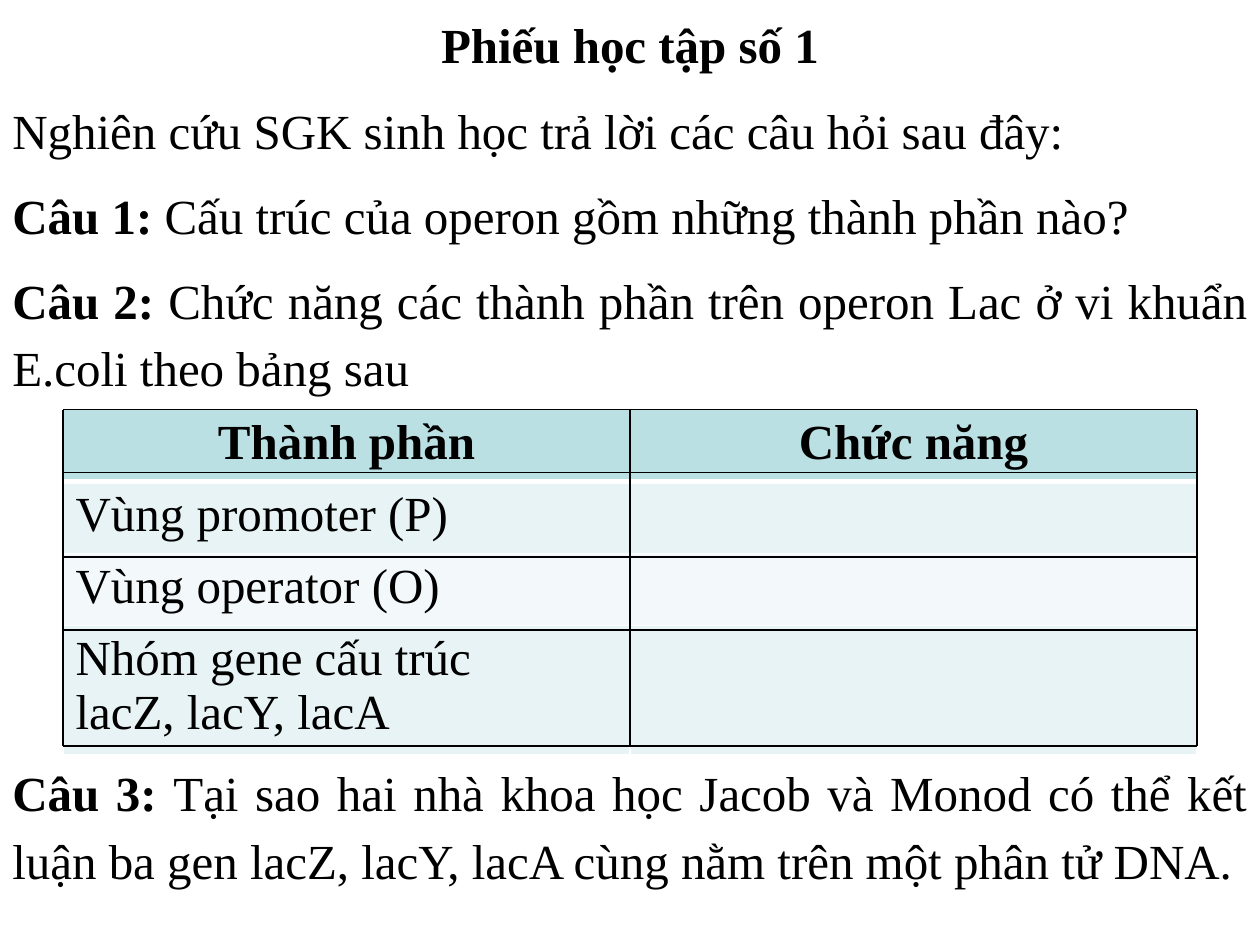
import pptx
import pptx.dml.color
import pptx.enum.shapes
import pptx.enum.text
import pptx.oxml.ns
import pptx.util
from lxml import etree

Cm, Pt = pptx.util.Cm, pptx.util.Pt
ALIGN = pptx.enum.text.PP_ALIGN
FONT = "Times New Roman"
COLORS = {
    "ink": "000000",
    "border": "FFFFFF",
    "header": "BBE0E3",
    "odd": "E7F3F4",
    "even": "F3F9FA",
}
LEFT, TOP, COLUMN_WIDTH = 1.27, 8.26, 11.43
ROW_HEIGHTS = [1.45, 1.45, 1.45, 2.61]
RULE_YS = [TOP, 9.53, 11.23, 12.7, 15.04]

QUESTIONS = [
    ("Câu 1: ", "Cấu trúc của operon gồm những thành phần nào?"),
    ("Câu 2: ", "Chức năng các thành phần trên operon Lac ở vi khuẩn E.coli theo bảng sau"),
    ("Câu 3: ", "Tại sao hai nhà khoa học Jacob và Monod có thể kết luận ba gen "
                "lacZ, lacY, lacA cùng nằm trên một phân tử DNA."),
]
COMPONENTS = [
    ("Thành phần", "Chức năng"),
    ("Vùng promoter (P)", ""),
    ("Vùng operator (O)", ""),
    ("Nhóm gene cấu trúc\nlacZ, lacY, lacA", ""),
]


def rgb(name):
    return pptx.dml.color.RGBColor.from_string(COLORS[name])


def style(paragraph, align, bold=None):
    paragraph.alignment = align
    paragraph.font.name = FONT
    paragraph.font.size = Pt(28)
    paragraph.font.bold = bold
    paragraph.font.color.rgb = rgb("ink")


def set_borders(cell, row):
    """Draw white cell borders, thicker between the header and the body."""
    qn = pptx.oxml.ns.qn
    properties = cell._tc.get_or_add_tcPr()
    widths = {"L": 1, "R": 1, "T": 3 if row == 1 else 1, "B": 3 if row == 0 else 1}
    for side, width in widths.items():
        line = etree.SubElement(properties, qn(f"a:ln{side}"), w=str(Pt(width)))
        fill = etree.SubElement(line, qn("a:solidFill"))
        etree.SubElement(fill, qn("a:srgbClr"), val=COLORS["border"])


def add_component_table(slide):
    table = slide.shapes.add_table(
        len(COMPONENTS), 2, Cm(LEFT), Cm(TOP),
        Cm(2 * COLUMN_WIDTH), Cm(sum(ROW_HEIGHTS))).table
    fills = ["header", "odd", "even", "odd"]
    for row, texts in enumerate(COMPONENTS):
        table.rows[row].height = Cm(ROW_HEIGHTS[row])
        for column, text in enumerate(texts):
            cell = table.cell(row, column)
            set_borders(cell, row)
            cell.fill.solid()
            cell.fill.fore_color.rgb = rgb(fills[row])
            if not text:
                continue
            cell.text = text
            for paragraph in cell.text_frame.paragraphs:
                style(paragraph, ALIGN.CENTER if row == 0 else ALIGN.LEFT, row == 0)


def add_worksheet_text(slide):
    frame = slide.shapes.add_textbox(0, 0, Cm(25.4), Cm(18.14)).text_frame
    frame.word_wrap = True
    title = frame.paragraphs[0]
    title.text = "Phiếu học tập số 1"
    style(title, ALIGN.CENTER, True)
    instruction = frame.add_paragraph()
    instruction.text = "Nghiên cứu SGK sinh học trả lời các câu hỏi sau đây:"
    style(instruction, ALIGN.JUSTIFY)
    for label, wording in QUESTIONS:
        question = frame.add_paragraph()
        style(question, ALIGN.JUSTIFY)
        for text, bold in ((label, True), (wording, False)):
            run = question.add_run()
            run.text = text
            run.font.bold = bold
    for paragraph in frame.paragraphs:
        paragraph.line_spacing = 1.15
        paragraph.space_after = Pt(10)
    # Room for the table above the last question
    frame.paragraphs[-1].space_before = Pt(194)


def add_rule(slide, x1, y1, x2, y2):
    rule = slide.shapes.add_connector(
        pptx.enum.shapes.MSO_CONNECTOR.STRAIGHT, Cm(x1), Cm(y1), Cm(x2), Cm(y2))
    rule.line.color.rgb = rgb("ink")
    rule.line.width = Pt(0.75)
    etree.SubElement(rule._element.spPr, pptx.oxml.ns.qn("a:effectLst"))


def add_table_rules(slide):
    for y in RULE_YS:
        add_rule(slide, LEFT, y, LEFT + 2 * COLUMN_WIDTH, y)
    for column in range(3):
        x = LEFT + column * COLUMN_WIDTH
        add_rule(slide, x, RULE_YS[0], x, RULE_YS[-1])


def main():
    presentation = pptx.Presentation()
    presentation.slide_width = Cm(25.4)
    presentation.slide_height = Cm(19.05)
    slide = presentation.slides.add_slide(presentation.slide_layouts[6])
    add_component_table(slide)
    add_worksheet_text(slide)
    add_table_rules(slide)
    presentation.save("out.pptx")


if __name__ == "__main__":
    main()
